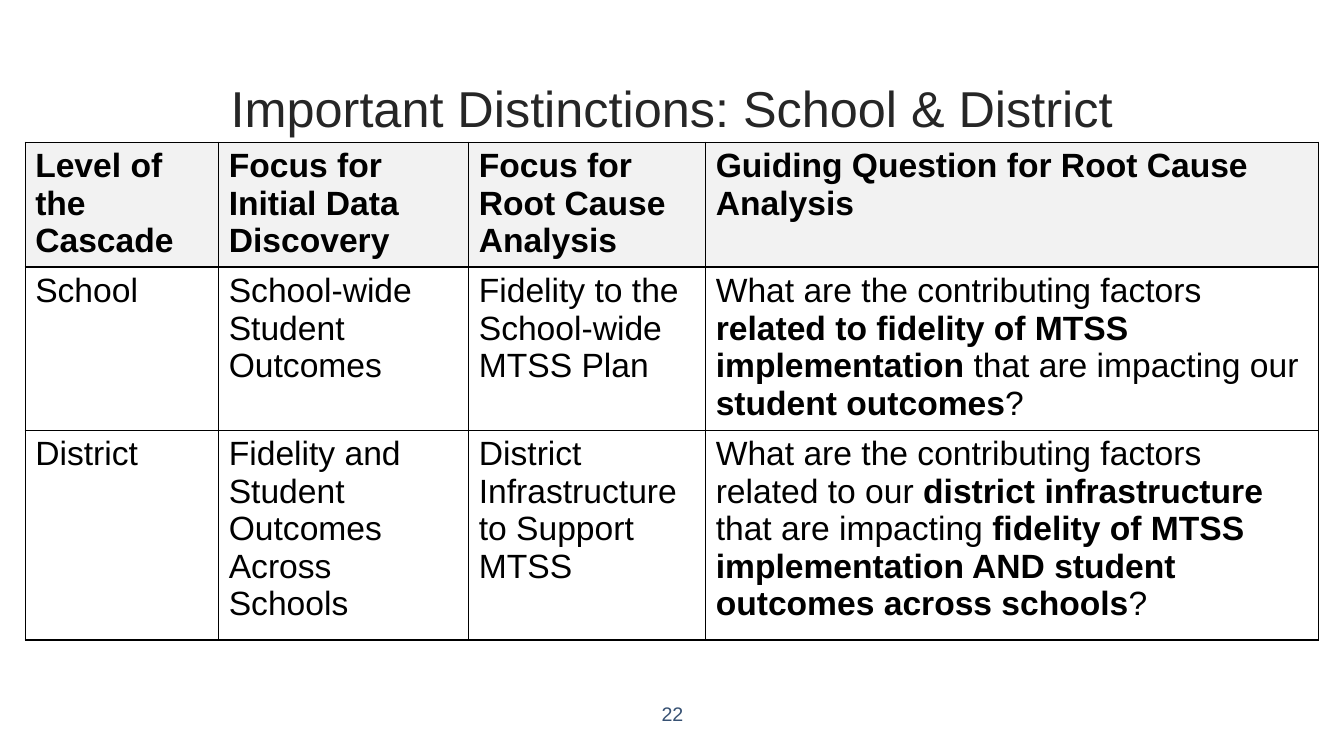
from dataclasses import dataclass

from lxml import etree
from pptx import Presentation
from pptx import util as u
from pptx.dml.color import RGBColor
from pptx.enum import text
from pptx.oxml import ns

FONT = "Arial"
BLACK = RGBColor(0x00, 0x00, 0x00)
TITLE_GREY = RGBColor(0x26, 0x26, 0x26)
NUMBER_BLUE = RGBColor(0x37, 0x51, 0x73)
HEADER_FILL = RGBColor(0xF2, 0xF2, 0xF2)

COLUMN_WIDTHS = (1.92, 2.48, 2.35, 6.08)
ROW_HEIGHTS = (1.24, 1.62, 2.08)
CELL_LINE_SPACING = u.Pt(26.8)


@dataclass(frozen=True)
class Level:
    """One level of the cascade; odd parts of the question are bold."""
    name: str
    discovery: str
    root_cause: str
    question: tuple[str, ...]


HEADERS = (
    "Level of the Cascade",
    "Focus for Initial Data Discovery",
    "Focus for Root Cause Analysis",
    "Guiding Question for Root Cause Analysis",
)
LEVELS = (
    Level("School", "School-wide Student Outcomes",
          "Fidelity to the School-wide MTSS Plan",
          ("What are the contributing factors ",
           "related to fidelity of MTSS implementation ",
           "that are impacting our ", "student outcomes", "?")),
    Level("District", "Fidelity and Student Outcomes Across Schools",
          "District Infrastructure to Support MTSS",
          ("What are the contributing factors related to our ",
           "district infrastructure ", "that are impacting ",
           "fidelity of MTSS implementation AND student outcomes across schools",
           "?")),
)


def add_text(p, content: str, *, size: float = 24, color: RGBColor = BLACK,
             bold: bool = False) -> None:
    r = p.add_run()
    r.text = content
    r.font.name = FONT
    r.font.size = u.Pt(size)
    r.font.bold = bold
    r.font.color.rgb = color


def add_centred_box(s, content: str, left: float, top: float, width: float,
                    height: float, *, size: float, color: RGBColor) -> None:
    sp = s.shapes.add_textbox(*map(u.Inches, (left, top, width, height)))
    tf = sp.text_frame
    tf.word_wrap = True
    tf.vertical_anchor = text.MSO_ANCHOR.MIDDLE
    tf.margin_left = tf.margin_right = tf.margin_top = tf.margin_bottom = 0
    p = tf.paragraphs[0]
    p.alignment = text.PP_ALIGN.CENTER
    add_text(p, content, size=size, color=color)


def add_borders(cell) -> None:
    tc_pr = cell._tc.get_or_add_tcPr()
    for i, side in enumerate(("lnL", "lnR", "lnT", "lnB")):
        ln = etree.Element(ns.qn(f"a:{side}"), w=str(u.Pt(1)))
        fill = etree.SubElement(ln, ns.qn("a:solidFill"))
        etree.SubElement(fill, ns.qn("a:srgbClr"), val=str(BLACK))
        tc_pr.insert(i, ln)


def fill_cell(cell, parts: tuple[str, ...], header: bool) -> None:
    if header:
        cell.fill.solid()
        cell.fill.fore_color.rgb = HEADER_FILL
    else:
        cell.fill.background()
    add_borders(cell)
    p = cell.text_frame.paragraphs[0]
    p.line_spacing = CELL_LINE_SPACING
    for i, part in enumerate(parts):
        add_text(p, part, bold=header or i % 2 == 1)


def add_levels_table(s) -> None:
    rows = [[(h,) for h in HEADERS]]
    rows += [[(lv.name,), (lv.discovery,), (lv.root_cause,), lv.question]
             for lv in LEVELS]
    table = s.shapes.add_table(
        len(rows), len(HEADERS), u.Inches(0.25), u.Inches(1.41),
        u.Inches(sum(COLUMN_WIDTHS)), u.Inches(sum(ROW_HEIGHTS))).table
    table.horz_banding = False
    for column, width in zip(table.columns, COLUMN_WIDTHS):
        column.width = u.Inches(width)
    for i, (row, height) in enumerate(zip(rows, ROW_HEIGHTS)):
        table.rows[i].height = u.Inches(height)
        for j, parts in enumerate(row):
            fill_cell(table.cell(i, j), parts, header=i == 0)


def main() -> None:
    prs = Presentation()
    prs.slide_width, prs.slide_height = u.Inches(13.33), u.Inches(7.5)
    s = prs.slides.add_slide(prs.slide_layouts[6])

    # Title
    add_centred_box(s, "Important Distinctions: School & District",
                    0.58, 0.72, 12.17, 0.7, size=36, color=TITLE_GREY)
    # Comparison of the levels
    add_levels_table(s)
    # Slide number
    add_centred_box(s, "22", 6.17, 6.83, 1, 0.5, size=14, color=NUMBER_BLUE)

    prs.save("out.pptx")


if __name__ == "__main__":
    main()
